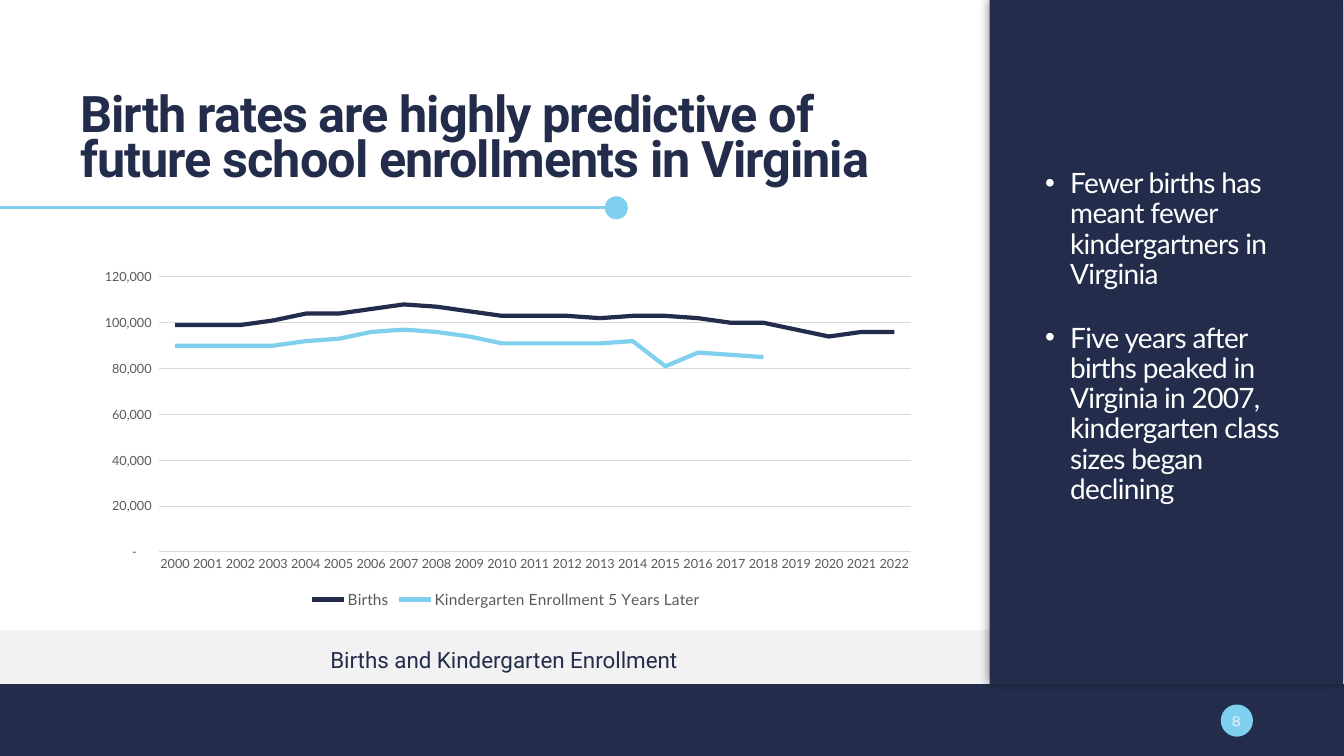
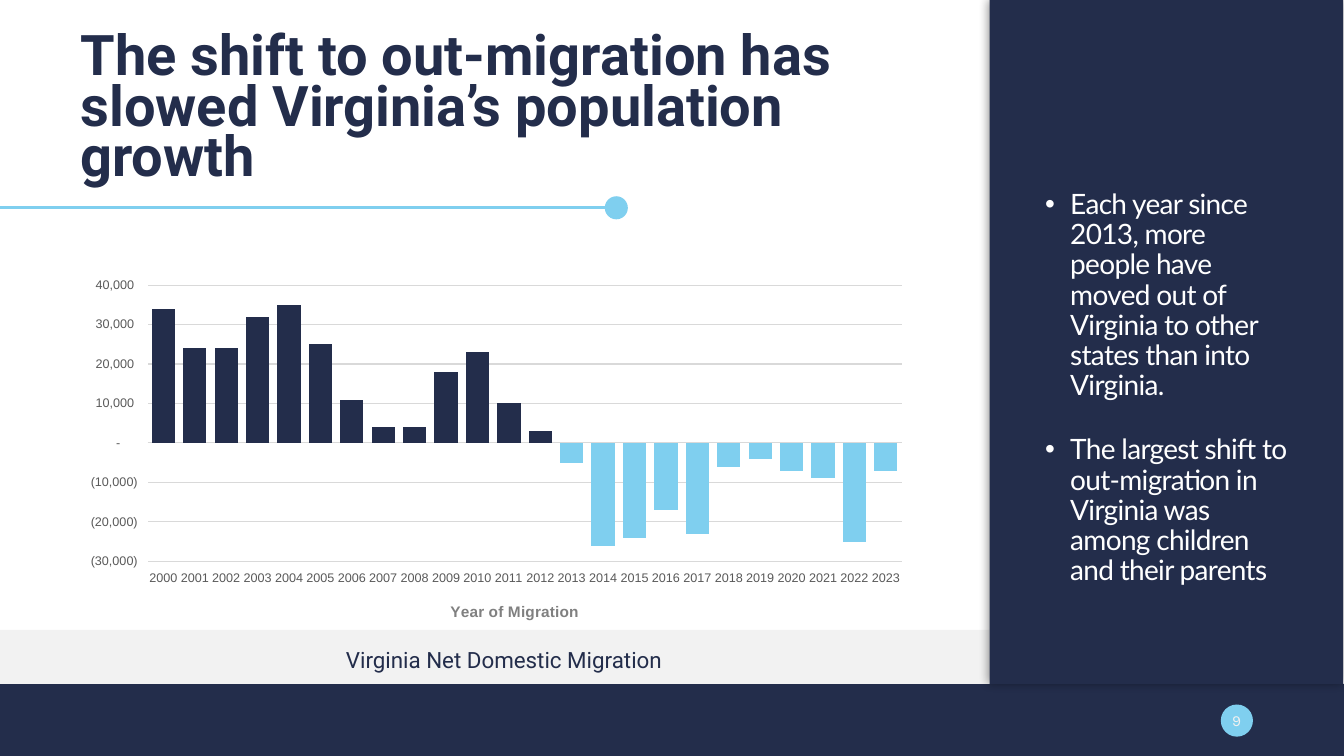
from lxml.etree import SubElement
from pptx import Presentation
from pptx.chart.data import CategoryChartData
from pptx.dml.color import RGBColor
from pptx.enum.chart import XL_CHART_TYPE, XL_LEGEND_POSITION, XL_TICK_LABEL_POSITION, XL_TICK_MARK
from pptx.enum.shapes import MSO_CONNECTOR, MSO_SHAPE
from pptx.enum.text import MSO_ANCHOR, PP_ALIGN
from pptx.oxml.ns import qn
from pptx.util import Pt

COLORS = {
    "navy": "232D4B", "sky": "7FCFEF", "band": "F2F2F2", "white": "FFFFFF", "footer": "F1F1EF",
    "grid": "D9D9D9", "label": "595959", "axis_title": "808080", "black": "000000",
}
NUMBER_FORMAT = r'_(* #,##0_);_(* \(#,##0\);_(* "-"??_);_(@_)'


def color(name):
    return RGBColor.from_string(COLORS[name])


def style_font(font, name, size, tint, bold=False):
    font.name, font.size, font.bold = name, Pt(size), bold
    font.color.rgb = color(tint)


def write(paragraph, text, font, size, tint, bold=False, tracking=0):
    run = paragraph.add_run()
    run.text = text
    style_font(run.font, font, size, tint, bold)
    if tracking:
        run._r.get_or_add_rPr().set("spc", str(round(tracking * 100)))


def add_bullet(paragraph, indent=18):
    properties = paragraph._p.get_or_add_pPr()
    properties.set("marL", str(Pt(indent)))
    properties.set("indent", str(-Pt(indent)))
    SubElement(properties, qn("a:buFont"), typeface="Arial")
    SubElement(properties, qn("a:buChar"), char="•")


def place(parent, index, **position):
    for previous in parent.findall(qn("c:layout")):
        parent.remove(previous)
    layout = SubElement(parent, qn("c:layout"))
    manual = SubElement(layout, qn("c:manualLayout"))
    if "w" in position:
        SubElement(manual, qn("c:layoutTarget"), val="inner")
    for side in "xy":
        SubElement(manual, qn(f"c:{side}Mode"), val="edge")
    for key, value in position.items():
        SubElement(manual, qn(f"c:{key}"), val=str(value))
    parent.insert(index, layout)


class Deck:
    """Hold the shared style and the slide being built."""

    def __init__(self):
        self.presentation = Presentation()
        self.presentation.slide_width = Pt(960)
        self.presentation.slide_height = Pt(540)
        self.slide = None

    def shape(self, kind, box, fill):
        shape = self.slide.shapes.add_shape(kind, *map(Pt, box))
        shape.shadow.inherit = False
        shape.fill.solid()
        shape.fill.fore_color.rgb = color(fill)
        shape.line.fill.background()
        return shape

    def soften(self, shape):
        effects = shape.element.spPr.find(qn("a:effectLst"))
        shadow = SubElement(effects, qn("a:outerShdw"), blurRad=str(Pt(7)), dist=str(Pt(1)),
                            dir="10800000", algn="r", rotWithShape="0")
        tint = SubElement(shadow, qn("a:srgbClr"), val=COLORS["black"])
        SubElement(tint, qn("a:alpha"), val="40000")

    def rule(self, start, end, y):
        line = self.slide.shapes.add_connector(MSO_CONNECTOR.STRAIGHT, Pt(start), Pt(y), Pt(end), Pt(y))
        line.line.color.rgb = color("sky")
        line.line.width = Pt(2.25)
        SubElement(line.element.spPr, qn("a:effectLst"))

    def text(self, box, paragraphs, align=PP_ALIGN.LEFT, anchor=MSO_ANCHOR.TOP,
             spacing=None, after=None, bullet=False, **run_format):
        frame = self.slide.shapes.add_textbox(*map(Pt, box)).text_frame
        frame.word_wrap = True
        frame.vertical_anchor = anchor
        for number, words in enumerate(paragraphs):
            paragraph = frame.add_paragraph() if number else frame.paragraphs[0]
            if bullet:
                add_bullet(paragraph)
            paragraph.alignment = align
            if spacing:
                paragraph.line_spacing = spacing
            if after:
                paragraph.space_after = Pt(after)
            write(paragraph, words, **run_format)

    def start(self, number, title, title_size, caption, points, points_top, tracking=0):
        self.slide = self.presentation.slides.add_slide(self.presentation.slide_layouts[6])
        self.shape(MSO_SHAPE.RECTANGLE, (0, 488.5, 960, 51.5), "navy")
        self.shape(MSO_SHAPE.OVAL, (872, 503.2, 23, 23), "sky")
        self.shape(MSO_SHAPE.RECTANGLE, (0, 450, 707, 38.5), "band")
        self.soften(self.shape(MSO_SHAPE.RECTANGLE, (707, 0, 252.5, 488.5), "navy"))
        self.shape(MSO_SHAPE.OVAL, (432, 140.2, 16.5, 16.5), "sky")
        self.rule(0, 432, 148.45)
        self.text((50.4, 43.2, 619.2, 93.6), [title], anchor=MSO_ANCHOR.BOTTOM, spacing=0.75,
                  font="Roboto", size=title_size, tint="navy", bold=True, tracking=tracking)
        self.text((739.4, points_top, 187.2, 450 - points_top), points, spacing=0.9, after=24,
                  bullet=True, font="Lato", size=20, tint="white", tracking=-0.5)
        self.text((867, 502, 32.4, 25.2), [str(number)], align=PP_ALIGN.CENTER,
                  anchor=MSO_ANCHOR.MIDDLE, font="Karla", size=11, tint="footer")
        self.text((50.4, 460, 619.2, 18.8), [caption], align=PP_ALIGN.CENTER,
                  spacing=0.9, font="Roboto", size=16, tint="navy")

    def chart(self, kind, box, first_year, series, font, low, high, step):
        data = CategoryChartData()
        longest = max(len(thousands) for thousands in series.values())
        data.categories = [str(first_year + offset) for offset in range(longest)]
        for name, thousands in series.items():
            padded = thousands + [None] * (longest - len(thousands))
            data.add_series(name, [None if value is None else value * 1000 for value in padded])
        chart = self.slide.shapes.add_chart(kind, *map(Pt, box), data).chart
        chart.has_title = chart.has_legend = False
        style_font(chart.font, "Calibri", 10, "black")
        chart.plots[0].vary_by_categories = False
        years, amounts = chart.category_axis, chart.value_axis
        for axis in (years, amounts):
            axis.major_tick_mark = axis.minor_tick_mark = XL_TICK_MARK.NONE
            style_font(axis.tick_labels.font, font, 9, "label")
        amounts.minimum_scale, amounts.maximum_scale, amounts.major_unit = low, high, step
        amounts.tick_labels.number_format = NUMBER_FORMAT
        amounts.tick_labels.number_format_is_linked = False
        amounts.format.line.fill.background()
        amounts.has_major_gridlines = True
        for line in (years.format.line, amounts.major_gridlines.format.line):
            line.color.rgb = color("grid")
            line.width = Pt(0.75)
        return chart

    def line_chart(self, box, first_year, series, tints, **axis_format):
        chart = self.chart(XL_CHART_TYPE.LINE, box, first_year, series, **axis_format)
        for trend, tint in zip(chart.plots[0].series, tints):
            trend.smooth = False
            trend.format.line.color.rgb = color(tint)
            trend.format.line.width = Pt(3)
        chart.has_legend = True
        chart.legend.position = XL_LEGEND_POSITION.BOTTOM
        chart.legend.include_in_layout = False
        style_font(chart.legend.font, "Lato", 11, "label")

    def column_chart(self, box, first_year, series, axis_title, **axis_format):
        chart = self.chart(XL_CHART_TYPE.COLUMN_CLUSTERED, box, first_year, series, **axis_format)
        chart.value_axis.major_tick_mark = XL_TICK_MARK.OUTSIDE
        chart.plots[0].gap_width = 35
        for columns in chart.plots[0].series:
            columns.invert_if_negative = False
            columns.format.fill.solid()
            columns.format.fill.fore_color.rgb = color("navy")
            for index, value in enumerate(columns.values):
                if value < 0:
                    loss = columns.points[index].format.fill
                    loss.solid()
                    loss.fore_color.rgb = color("sky")
        years = chart.category_axis
        years.tick_label_position = XL_TICK_LABEL_POSITION.LOW
        write(years.axis_title.text_frame.paragraphs[0], axis_title, "Arial", 11, "axis_title", bold=True)
        place(years.axis_title.element, 1, x=0.44, y=0.94)
        place(chart.element.xpath("c:chart/c:plotArea")[0], 0, x=0.09, y=0.09, w=0.88, h=0.75)


def main():
    deck = Deck()
    deck.start(
        8, "Birth rates are highly predictive of future school enrollments in Virginia", 36,
        "Births and Kindergarten Enrollment",
        ["Fewer births has meant fewer kindergartners in Virginia",
         "Five years after births peaked in Virginia in 2007, kindergarten class sizes began declining"],
        points_top=117.4, tracking=-0.7)
    births = [99, 99, 99, 101, 104, 104, 106, 108, 107, 105, 103, 103,
              103, 102, 103, 103, 102, 100, 100, 97, 94, 96, 96]
    enrollment = [90, 90, 90, 90, 92, 93, 96, 97, 96, 94, 91, 91, 91, 91, 92, 81, 87, 86, 85]
    deck.line_chart(
        (60.5, 187.2, 602, 250.6), 2000,
        {"Births": births, "Kindergarten Enrollment 5 Years Later": enrollment},
        ("navy", "sky"), font="Lato", low=0, high=120000, step=20000)

    deck.start(
        9, "The shift to out-migration has slowed Virginia’s population growth", 40,
        "Virginia Net Domestic Migration",
        ["Each year since 2013, more people have moved out of Virginia to other states than into Virginia.",
         "The largest shift to out-migration in Virginia was among children and their parents"],
        points_top=132.4)
    migration = [34, 24, 24, 32, 35, 25, 11, 4, 4, 18, 23, 10, 3,
                 -5, -26, -24, -17, -23, -6, -4, -7, -9, -25, -7]
    deck.column_chart(
        (50.4, 180, 612, 266.4), 2000, {"Series 1": migration}, "Year of Migration",
        font="Arial", low=-30000, high=40000, step=10000)
    deck.presentation.save("out.pptx")


if __name__ == "__main__":
    main()
